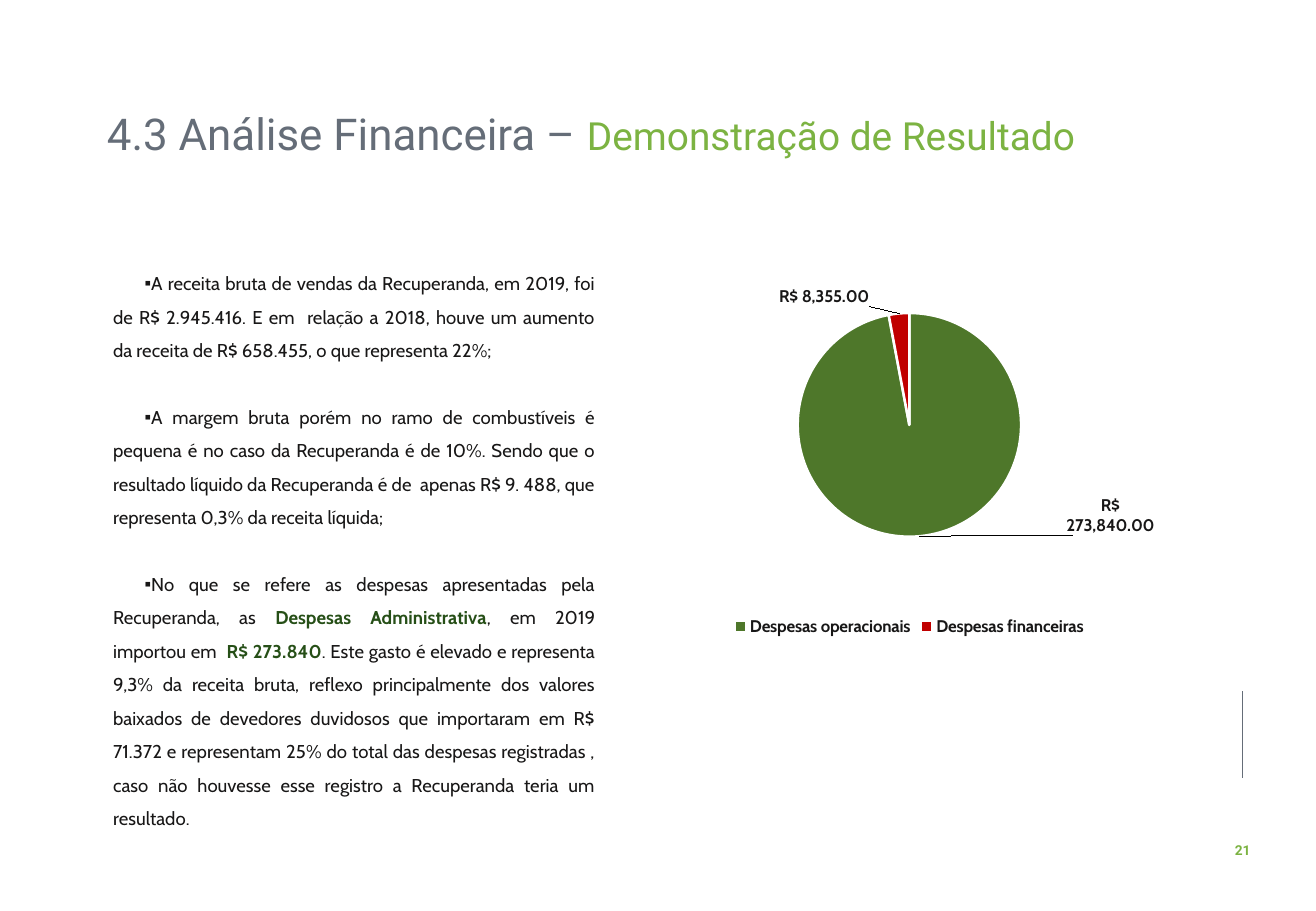
from pptx import Presentation
from pptx.chart.data import CategoryChartData as PieData
from pptx.dml.color import RGBColor as Rgb
from pptx.enum.chart import XL_CHART_TYPE as Kind, XL_LABEL_POSITION as Spot, XL_LEGEND_POSITION as Side
from pptx.enum.text import MSO_ANCHOR as Anchor, MSO_AUTO_SIZE as Fit, PP_ALIGN as Align
from pptx.oxml import parse_xml
from pptx.oxml.ns import nsdecls, qn
from pptx.oxml.xmlchemy import OxmlElement as Node
from pptx.util import Cm, Pt

COLORS = {"gray": "656D78", "lime": "7CB342", "ink": "181717", "dark": "264F17",
          "green": "4E772A", "red": "C00000", "white": "FFFFFF"}


def style(font, name, size, color, bold=False):
    look = {"name": name, "size": Pt(size), "bold": bold}
    for key, value in look.items():
        setattr(font, key, value)
    font.color.rgb = Rgb.from_string(COLORS[color])


def layout(**values):
    items = "".join(f'<c:{key} val="{value}"/>' for key, value in values.items())
    return parse_xml(f'<c:layout {nsdecls("c")}><c:manualLayout>{items}</c:manualLayout></c:layout>')


deck = Presentation()
deck.slide_width, deck.slide_height = Cm(27.51), Cm(19.05)
slide = deck.slides.add_slide(deck.slide_layouts[1])
title, body = slide.placeholders

# Place title and body
boxes = [(title, 1.98, 2.18, 22.2, 1.35, Anchor.MIDDLE),
         (body, 2.11, 5.33, 10.59, 11.46, Anchor.TOP)]
for shape, *place, anchor in boxes:
    for key, value in zip(("left", "top", "width", "height"), place):
        setattr(shape, key, Cm(value))
    frame = {"word_wrap": True, "auto_size": Fit.NONE, "vertical_anchor": anchor}
    for key, value in frame.items():
        setattr(shape.text_frame, key, value)

# Title
line = title.text_frame.paragraphs[0]
line.alignment, line.line_spacing = Align.LEFT, 0.9
for text, size, color in [("4.3 Análise Financeira – ", 26, "gray"),
                          ("Demonstração de Resultado", 23, "lime")]:
    run = line.add_run()
    run.text = text
    style(run.font, "Roboto", size, color)

# Body: every second run is a highlight
points = [
    ["A receita bruta de vendas da Recuperanda, em 2019, foi de R$ 2.945.416. E em  relação a 2018, "
     "houve um aumento da receita de R$ 658.455, o que representa 22%;"],
    ["A margem bruta porém no ramo de combustíveis é pequena é no caso da Recuperanda é de 10%. "
     "Sendo que o resultado líquido da Recuperanda é de  apenas R$ 9. 488, que representa 0,3% da "
     "receita líquida;"],
    ["No que se refere as despesas apresentadas pela Recuperanda, as ",
     "Despesas Administrativa", ", em 2019 importou em  ", "R$ 273.840",
     ". Este gasto é elevado e representa 9,3% da receita bruta, reflexo principalmente dos valores "
     "baixados de devedores duvidosos que importaram em R$ 71.372 e representam 25% do total das "
     "despesas registradas , caso não houvesse esse registro a Recuperanda teria um resultado."],
]
for i, parts in enumerate(points):
    para = body.text_frame.paragraphs[0] if i == 0 else body.text_frame.add_paragraph()
    props = para._p.get_or_add_pPr()
    props.set("marL", "0")
    props.set("indent", str(Cm(0.66)))
    bullet = Node("a:buChar")
    bullet.set("char", "▪")
    props.append(bullet)
    form = {"alignment": Align.JUSTIFY, "line_spacing": 1.5, "space_before": Pt(19.8 if i else 0)}
    for key, value in form.items():
        setattr(para, key, value)
    for j, text in enumerate(parts):
        run = para.add_run()
        run.text = text
        style(run.font, "Cabin", 11, "dark" if j % 2 else "ink", bool(j % 2))

# Pie chart
data = PieData()
data.categories = ["Despesas operacionais", "Despesas financeiras"]
data.add_series("Series 1", [273840, 8355])
chart = slide.shapes.add_chart(Kind.PIE, Cm(13.89), Cm(5.61), Cm(10.26), Cm(7.8), data).chart
chart.has_title = False
chart.has_legend = True
chart.legend.position, chart.legend.include_in_layout = Side.BOTTOM, False
style(chart.font, "Cabin", 10, "ink")
style(chart.legend.font, "Cabin", 10, "ink", True)
area = chart.element.find(".//" + qn("c:plotArea"))
for old in area.findall(qn("c:layout")):
    area.remove(old)
area.insert(0, layout(layoutTarget="inner", xMode="edge", yMode="edge", x=0.27, y=0.12, w=0.46, h=0.6))

# Slices and labels
plot = chart.plots[0]
plot.vary_by_categories = True
series = plot.series[0]
labels = series.data_labels
labels.show_value = True
labels.number_format, labels.number_format_is_linked = '"R$ "#,##0.00', False
style(labels.font, "Cabin", 10, "ink", True)
for i, (color, shift) in enumerate([("green", (0.31, -0.13)), ("red", (-0.06, 0))]):
    slice_ = series.points[i]
    slice_.format.fill.solid()
    slice_.format.fill.fore_color.rgb = Rgb.from_string(COLORS[color])
    slice_.format.line.color.rgb = Rgb.from_string(COLORS["white"])
    slice_.format.line.width = Pt(1.5)
    label = slice_.data_label
    style(label.font, "Cabin", 10, "ink", True)
    label.position = Spot.OUTSIDE_END
    tag = labels._element.findall(qn("c:dLbl"))[i]
    tag.insert(1, layout(x=shift[0], y=shift[1]))
    form = Node("c:numFmt")
    form.set("formatCode", '"R$ "#,##0.00')
    form.set("sourceLinked", "0")
    tag.insert(2, form)

# Side rule
rule = slide.shapes.add_connector(1, Cm(25.98), Cm(14.45), Cm(25.98), Cm(16.26))
rule.line.color.rgb = Rgb.from_string(COLORS["gray"])
rule.line.width = Pt(0.5)
rule._element.spPr.append(Node("a:effectLst"))

# Page number
page = slide.shapes.add_textbox(Cm(25.55), Cm(17.48), Cm(0.86), Cm(0.61)).text_frame
page.word_wrap = False
para = page.paragraphs[0]
para.alignment = Align.CENTER
run = para.add_run()
run.text = "21"
style(run.font, "Roboto", 8.1, "lime", True)

deck.save("out.pptx")
